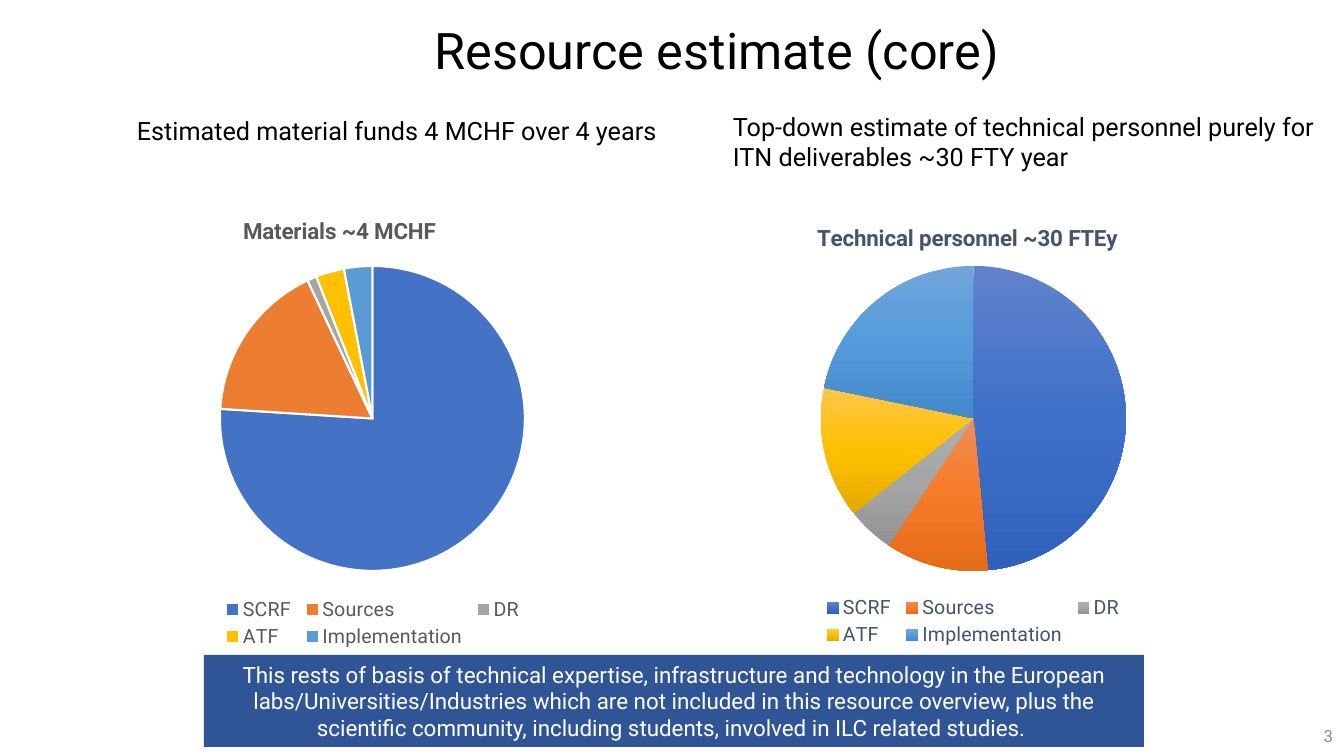
from copy import deepcopy
from lxml.etree import SubElement
from pptx import Presentation
from pptx.chart.data import CategoryChartData
from pptx.dml.color import RGBColor
from pptx.enum.chart import XL_CHART_TYPE, XL_LEGEND_POSITION
from pptx.enum.shapes import MSO_SHAPE
from pptx.enum.text import MSO_ANCHOR, PP_ALIGN
from pptx.oxml.ns import qn
from pptx.util import Pt

FONT = "Roboto"
WIDE, HIGH = 1344, 756
PX = 12192000 / WIDE

TITLE = ("Resource estimate (core) ", (219, 13, 1008, 72))
NOTES = [
    ("Estimated material funds 4 MCHF over 4 years", (127, 110, 545, 40)),
    ("Top-down estimate of technical personnel purely for ITN deliverables ~30 FTY year",
     (723, 106, 607, 72)),
]
BANNER = (
    "This rests of basis of technical expertise, infrastructure and technology in the European "
    "labs/Universities/Industries which are not included in this resource overview, plus the "
    "scientific community, including students, involved in ILC related studies. ",
    (204, 655, 940, 92),
)
NUMBER = ("3", (1041, 716, 302, 40))

PARTS = ["SCRF", "Sources", "DR", "ATF", "Implementation"]
PIES = [
    {
        "title": "Materials ~4 MCHF", "ink": "595959", "box": (73, 202, 600, 452),
        "head": (239, 213), "pie": (220, 266, 305, 305), "key": (218, 594, 310, 58),
        "vals": [76, 17, 1, 3, 3],
        "fills": [["4472C4"], ["ED7D31"], ["A5A5A5"], ["FFC000"], ["5B9BD5"]],
    },
    {
        "title": "Technical personnel ~30 FTEy", "ink": "44546A", "box": (695, 202, 557, 450),
        "head": (813, 220), "pie": (821, 266, 305, 305), "key": (818, 593, 310, 57),
        "vals": [49, 11, 5, 14, 22],
        "fills": [
            ["6183CB", "3E70CA", "3062BB"],
            ["F18C57", "F67B28", "E56C19"],
            ["AFAFAF", "A5A5A5", "939393"],
            ["FFC64B", "FFC000", "E3AB00"],
            ["71A6DB", "559BDB", "448ACA"],
        ],
    },
]


def rgb(code):
    return RGBColor.from_string(code)


def emu(box):
    return [round(n * PX) for n in box]


def style(font, size, ink, bold=False):
    font.name, font.size, font.bold = FONT, Pt(size), bold
    font.color.rgb = rgb(ink)


def write(shape, text, size, ink, align):
    frame = shape.text_frame
    frame.word_wrap = True
    frame.text = text
    para = frame.paragraphs[0]
    para.alignment = align
    style(para.runs[0].font, size, ink)
    return para


def place(node, box, frame, spot, inner=False):
    for old in node.findall(qn("c:layout")):
        node.remove(old)
    layout = SubElement(node, qn("c:layout"))
    node.remove(layout)
    node.insert(spot, layout)
    manual = SubElement(layout, qn("c:manualLayout"))
    if inner:
        SubElement(manual, qn("c:layoutTarget")).set("val", "inner")
    for axis in "xy":
        SubElement(manual, qn(f"c:{axis}Mode")).set("val", "edge")
    left, top, wide, high = frame
    start = (box[0] - left, box[1] - top)
    shares = zip("xywh", start + box[2:], (wide, high, wide, high))
    for name, part, whole in shares:
        SubElement(manual, qn(f"c:{name}")).set("val", f"{part / whole:.4f}")


def blend(fill, stops, root):
    fill.gradient()
    fill.gradient_angle = 270
    ramp = list(root.iter(qn("a:gsLst")))[-1]
    first = ramp[0]
    for old in list(ramp)[1:]:
        ramp.remove(old)
    while len(ramp) < len(stops):
        ramp.append(deepcopy(first))
    for at, (stop, code) in enumerate(zip(fill.gradient_stops, stops)):
        stop.position = at / (len(stops) - 1)
        stop.color.rgb = rgb(code)


def draw(slide, pie):
    data = CategoryChartData()
    data.categories = PARTS
    data.add_series("Series 1", pie["vals"])
    chart = slide.shapes.add_chart(XL_CHART_TYPE.PIE, *emu(pie["box"]), data).chart
    chart.font.name, chart.font.size = "Calibri", Pt(10)
    chart.has_title = True
    chart.chart_title.include_in_layout = False
    head = chart.chart_title.text_frame
    head.text = pie["title"]
    style(head.paragraphs[0].runs[0].font, 16, pie["ink"], True)
    chart.has_legend = True
    chart.legend.position = XL_LEGEND_POSITION.BOTTOM
    chart.legend.include_in_layout = False
    style(chart.legend.font, 14, pie["ink"])
    plot = chart.plots[0]
    plot.vary_by_categories = True
    root = chart.element if hasattr(chart, "element") else chart._chartSpace
    for at, codes in enumerate(pie["fills"]):
        form = plot.series[0].points[at].format
        if len(codes) > 1:
            blend(form.fill, codes, root)
            form.line.fill.background()
        else:
            form.fill.solid()
            form.fill.fore_color.rgb = rgb(codes[0])
            form.line.color.rgb = rgb("FFFFFF")
            form.line.width = Pt(1.5)
    body = root.find(qn("c:chart"))
    place(body.find(qn("c:title")), pie["head"], pie["box"], 1)
    place(body.find(qn("c:plotArea")), pie["pie"], pie["box"], 0, True)
    place(body.find(qn("c:legend")), pie["key"], pie["box"], 1)


def main():
    deck = Presentation()
    deck.slide_width, deck.slide_height = emu((WIDE, HIGH))
    slide = deck.slides.add_slide(deck.slide_layouts[5])
    shapes = slide.shapes

    for pie in PIES:
        draw(slide, pie)

    text, box = TITLE
    title = shapes.title
    title.left, title.top, title.width, title.height = emu(box)
    write(title, text, 36, "000000", PP_ALIGN.CENTER)

    for text, box in NOTES:
        write(shapes.add_textbox(*emu(box)), text, 18, "000000", PP_ALIGN.LEFT)

    text, box = BANNER
    banner = shapes.add_shape(MSO_SHAPE.RECTANGLE, *emu(box))
    banner.shadow.inherit = False
    banner.fill.solid()
    banner.fill.fore_color.rgb = rgb("2F5597")
    banner.line.fill.background()
    write(banner, text, 16, "FFFFFF", PP_ALIGN.CENTER)

    text, box = NUMBER
    number = shapes.add_textbox(*emu(box))
    number.text_frame.vertical_anchor = MSO_ANCHOR.MIDDLE
    write(number, text, 12, "8C8C8C", PP_ALIGN.RIGHT)

    deck.save("out.pptx")


if __name__ == "__main__":
    main()
